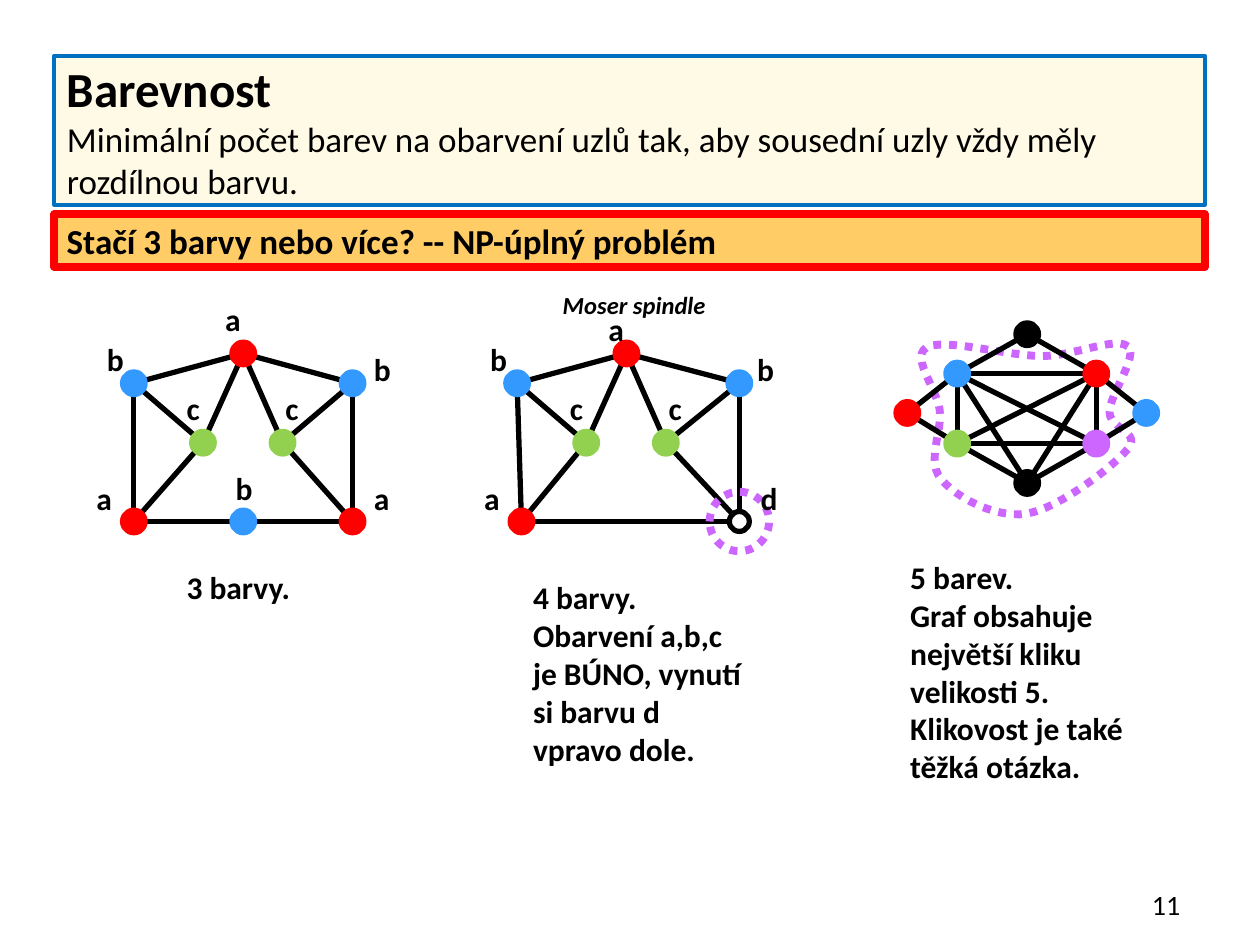
from itertools import combinations

from lxml import etree
from pptx import Presentation
from pptx import util as u
from pptx.dml.color import RGBColor
from pptx.enum import dml, shapes, text
from pptx.oxml import ns

COLORS = {
    "black": "000000", "white": "FFFFFF", "red": "FF0000", "blue": "3399FF",
    "green": "92D050", "violet": "CC66FF", "cream": "FFFAE5",
    "orange": "FFCC66", "frame": "0070C0",
}


def color(name):
    return RGBColor.from_string(COLORS[name])


class GraphPage:
    font = "Calibri"
    node_size = 11.4
    edge_width = 3
    heavy_width = 4.5

    def __init__(self, page):
        self.page = page

    def paint(self, shape, fill, line, width, dotted=False):
        if fill:
            shape.fill.solid()
            shape.fill.fore_color.rgb = color(fill)
        else:
            shape.fill.background()
        shape.line.color.rgb = color(line)
        shape.line.width = u.Pt(width)
        if dotted:
            shape.line.dash_style = dml.MSO_LINE.ROUND_DOT

    def set_lines(self, box, lines, size, bold=True, italic=False,
                  align=text.PP_ALIGN.LEFT):
        box.text_frame.text = "\n".join(lines)
        for para in box.text_frame.paragraphs:
            para.alignment = align
            for span in para.runs:
                span.font.name = self.font
                span.font.size = u.Pt(size)
                span.font.bold = bold
                span.font.italic = italic
                span.font.color.rgb = color("black")

    def title(self, heading, definition, left, top, width, height):
        box = self.page.shapes.title
        box.left, box.top = u.Pt(left), u.Pt(top)
        box.width, box.height = u.Pt(width), u.Pt(height)
        self.paint(box, "cream", "frame", 2.25)
        self.set_lines(box, [heading, definition], 20)
        first, second = box.text_frame.paragraphs
        first.runs[0].font.size = u.Pt(28)
        second.runs[0].font.bold = False
        box.text_frame.auto_size = text.MSO_AUTO_SIZE.NONE
        box.text_frame.vertical_anchor = text.MSO_ANCHOR.MIDDLE

    def banner(self, line, left, top, width, height):
        box = self.page.shapes.add_shape(
            shapes.MSO_SHAPE.RECTANGLE,
            u.Pt(left), u.Pt(top), u.Pt(width), u.Pt(height))
        box.shadow.inherit = False
        self.paint(box, "orange", "red", self.heavy_width)
        self.set_lines(box, [line], 20)
        box.text_frame.vertical_anchor = text.MSO_ANCHOR.MIDDLE

    def label(self, lines, left, top, width=24, height=29, size=18,
              wrap=False, **style):
        box = self.page.shapes.add_textbox(
            u.Pt(left), u.Pt(top), u.Pt(width), u.Pt(height))
        box.text_frame.word_wrap = wrap
        self.set_lines(box, lines, size, **style)

    def circle(self, center, size, fill, line, width, dotted=False):
        x, y = center
        dot = self.page.shapes.add_shape(
            shapes.MSO_SHAPE.OVAL, u.Pt(x - size / 2), u.Pt(y - size / 2),
            u.Pt(size), u.Pt(size))
        dot.shadow.inherit = False
        self.paint(dot, fill, line, width, dotted)

    def edge(self, start, end):
        line = self.page.shapes.add_connector(
            shapes.MSO_CONNECTOR.STRAIGHT, *map(u.Pt, start + end))
        line.line.color.rgb = color("black")
        line.line.width = u.Pt(self.edge_width)
        etree.SubElement(line._element.spPr, ns.qn("a:effectLst"))

    def graph(self, nodes, edges):
        """Nodes map a name to (x, y, colour); a white node is an open ring."""
        for start, end in edges:
            self.edge(nodes[start][:2], nodes[end][:2])
        for x, y, fill in nodes.values():
            open_ring = fill == "white"
            self.circle((x, y), self.node_size, fill,
                        "black" if open_ring else fill,
                        self.edge_width if open_ring else self.heavy_width)

    def curve(self, start, segments, steps=12):
        points, here = [], start
        for a, b, end in segments:
            for step in range(1, steps + 1):
                t = step / steps
                s = 1 - t
                points.append(tuple(
                    s**3 * p + 3 * s * s * t * q + 3 * s * t * t * r + t**3 * e
                    for p, q, r, e in zip(here, a, b, end)))
            here = end
        # Builder units are hundredths of a point, as it rounds to integers
        fine = [(x * 100, y * 100) for x, y in [start] + points]
        builder = self.page.shapes.build_freeform(
            *fine[0], scale=u.Pt(1) / 100)
        builder.add_line_segments(fine[1:], close=True)
        outline = builder.convert_to_shape()
        outline.shadow.inherit = False
        self.paint(outline, "white", "violet", self.heavy_width, dotted=True)


def main():
    deck = Presentation()
    deck.slide_width, deck.slide_height = u.Pt(720), u.Pt(540)
    sketch = GraphPage(deck.slides.add_slide(deck.slide_layouts[5]))

    # Definition and question
    sketch.title("Barevnost",
                 "Minimální počet barev na obarvení uzlů tak, aby sousední "
                 "uzly vždy měly rozdílnou barvu.", 31, 32, 657.5, 85)
    sketch.banner("Stačí 3 barvy nebo více? -- NP-úplný problém",
                  31, 122.5, 657.5, 30)

    # Outline around the clique
    sketch.curve((644.5, 198), [
        ((638, 192), (614, 203.5), (595.5, 203.5)),
        ((576, 203.5), (539.5, 193), (529.5, 198.5)),
        ((520, 204), (535.5, 222), (537, 234.5)),
        ((538.5, 247), (529, 264), (538, 274)),
        ((546.5, 284.5), (569.5, 296.5), (587, 293.5)),
        ((605, 290.5), (636.5, 266.5), (644.5, 256.5)),
        ((652.5, 247), (634, 245), (634, 235.5)),
        ((634, 225.5), (651, 203), (644.5, 198)),
    ])

    # Graph with three colours
    spindle_edges = [
        ("top", "left"), ("top", "right"), ("top", "inner left"),
        ("top", "inner right"), ("left", "inner left"),
        ("right", "inner right"), ("left", "low left"),
        ("right", "low right"), ("inner left", "low left"),
        ("inner right", "low right"),
    ]
    three = {
        "top": (139, 202, "red"), "left": (76.5, 219, "blue"),
        "right": (201.5, 219, "blue"), "inner left": (116, 253, "green"),
        "inner right": (161.5, 253, "green"), "low left": (76.5, 298, "red"),
        "low right": (201.5, 298, "red"), "low middle": (139, 298, "blue"),
    }
    sketch.graph(three, spindle_edges + [("low left", "low middle"),
                                         ("low middle", "low right")])

    # Moser spindle: the same graph moved, without the low middle node
    shift = 219
    four = {name: (x + shift, y, fill) for name, (x, y, fill) in three.items()
            if name != "low middle"}
    four["low left"] = (298, 298, "red")
    four["right"] = (422.5, 219, "blue")
    four["low right"] = (422.5, 298, "white")
    sketch.graph(four, spindle_edges + [("low left", "low right")])
    sketch.circle((422.5, 298), 34, None, "violet", 4.5, dotted=True)

    # Graph with a clique of five
    clique = ["low left", "left", "right", "low right", "bottom"]
    five = {
        "low left": (547, 253.5, "green"), "left": (547, 213.5, "blue"),
        "right": (626.5, 213.5, "red"), "low right": (626.5, 253.5, "violet"),
        "bottom": (587, 276, "black"), "far left": (518.5, 236, "red"),
        "far right": (655, 236, "blue"), "top": (587, 191, "black"),
    }
    sketch.graph(five, list(combinations(clique, 2)) + [
        ("far left", "low left"), ("far left", "left"),
        ("far right", "low right"), ("far right", "right"),
        ("top", "left"), ("top", "right")])

    # Node labels
    for letter, left, top in [
            ("a", 121.5, 168), ("b", 54, 191), ("b", 206.5, 196.5),
            ("c", 99.5, 219), ("c", 156, 219), ("a", 48, 270),
            ("a", 206.5, 270), ("b", 127.5, 264.5),
            ("a", 340.5, 173.5), ("b", 273, 191), ("b", 425.5, 196.5),
            ("c", 318.5, 219), ("c", 375, 219), ("a", 269.5, 270),
            ("d", 427.5, 270)]:
        sketch.label([letter], left, top)

    # Captions and page number
    sketch.label(["Moser spindle"], 314.5, 162, 96.5, 24.5, 14, italic=True)
    sketch.label(["3 barvy."], 99.5, 321, 74)
    sketch.label(["4 barvy.", "Obarvení a,b,c", "je BÚNO, vynutí",
                  "si barvu d", "vpravo dole."], 297.5, 327, 134.5, 116.5)
    sketch.label(["5 barev.", "Graf obsahuje", "největší kliku",
                  "velikosti 5.", "Klikovost je také", "těžká otázka."],
                 513, 315.5, 137, 138)
    sketch.label(["11"], 513.5, 503.5, 168, 27, 16, wrap=True, bold=False,
                 align=text.PP_ALIGN.RIGHT)

    deck.save("out.pptx")


if __name__ == "__main__":
    main()
